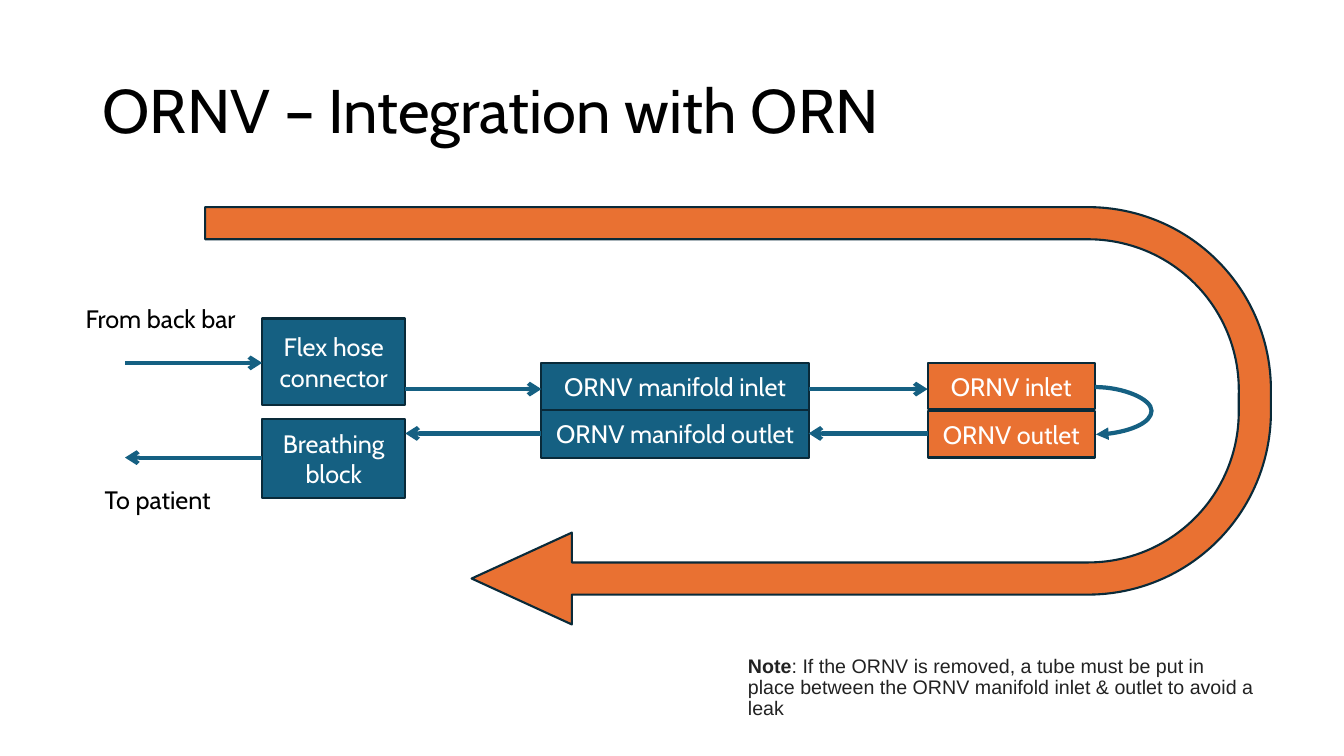
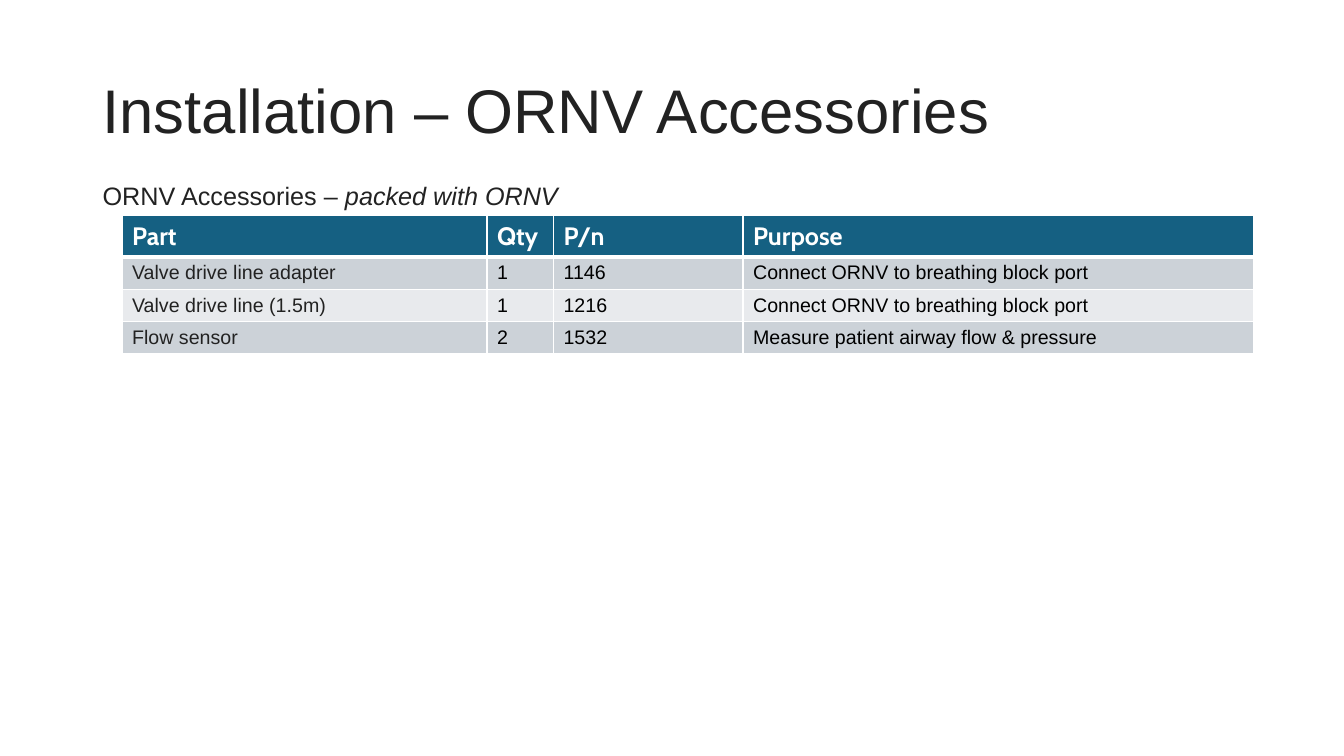
from dataclasses import dataclass

from lxml.etree import SubElement
from pptx import Presentation
from pptx.dml.color import RGBColor
from pptx.enum.shapes import MSO_CONNECTOR as Connector, MSO_SHAPE as Shape
from pptx.enum.text import MSO_ANCHOR as Anchor, MSO_AUTO_SIZE as AutoSize, PP_ALIGN as Align
from pptx.oxml.ns import qn
from pptx.util import Inches, Pt


@dataclass(frozen=True)
class Theme:
    blue: str = "156082"
    orange: str = "E97132"
    outline: str = "092A39"
    black: str = "000000"
    charcoal: str = "222222"
    white: str = "FFFFFF"
    bands: tuple = ("CCD2D8", "E8EAED")
    display: str = "Cabin"
    plain: str = "Arial"
    title_size: int = 44
    body_size: int = 18
    small_size: int = 14
    outline_width: float = 1.5
    arrow_width: float = 3


THEME = Theme()


def rgb(value):
    return RGBColor.from_string(value)


def add_run(paragraph, text, size, font, color, bold=False, italic=False):
    run = paragraph.add_run()
    run.text = text
    run.font.size = Pt(size)
    run.font.name = font
    run.font.color.rgb = rgb(color)
    run.font.bold = bold
    run.font.italic = italic


def add_text_box(slide, box, wrap=True, anchor=Anchor.TOP):
    shape = slide.shapes.add_textbox(*map(Inches, box))
    frame = shape.text_frame
    frame.word_wrap = wrap
    frame.auto_size = AutoSize.NONE
    frame.vertical_anchor = anchor
    return frame.paragraphs[0]


def set_indent(paragraph, left, first=0):
    properties = paragraph._p.get_or_add_pPr()
    properties.set("marL", str(Inches(left)))
    properties.set("indent", str(Inches(first)))


def add_title(slide, text, font, color):
    paragraph = add_text_box(slide, (0.92, 0.4, 11.5, 1.45), anchor=Anchor.MIDDLE)
    paragraph.line_spacing = 0.9
    add_run(paragraph, text, THEME.title_size, font, color)


def add_label(slide, box, text):
    paragraph = add_text_box(slide, box, wrap=False)
    add_run(paragraph, text, THEME.body_size, THEME.display, THEME.black)


def add_outlined_shape(slide, kind, box, fill):
    shape = slide.shapes.add_shape(kind, *map(Inches, box))
    shape.shadow.inherit = False
    shape.fill.solid()
    shape.fill.fore_color.rgb = rgb(fill)
    shape.line.color.rgb = rgb(THEME.outline)
    shape.line.width = Pt(THEME.outline_width)
    return shape


def add_block(slide, box, text, fill):
    frame = add_outlined_shape(slide, Shape.RECTANGLE, box, fill).text_frame
    frame.word_wrap = True
    frame.vertical_anchor = Anchor.MIDDLE
    paragraph = frame.paragraphs[0]
    paragraph.alignment = Align.CENTER
    add_run(paragraph, text, THEME.body_size, THEME.display, THEME.white)


def add_arrow(slide, start, end, kind=Connector.STRAIGHT, head="arrow"):
    connector = slide.shapes.add_connector(kind, *map(Inches, (*start, *end)))
    connector.line.color.rgb = rgb(THEME.blue)
    connector.line.width = Pt(THEME.arrow_width)
    SubElement(connector.line._get_or_add_ln(), qn("a:tailEnd"), type=head)
    SubElement(connector._element.spPr, qn("a:effectLst"))
    return connector


def add_return_curve(slide, start, end, bulge):
    connector = add_arrow(slide, start, end, Connector.CURVE, "triangle")
    ratio = round(bulge / (end[0] - start[0]) * 100000)
    adjustments = connector._element.spPr.find(qn("a:prstGeom")).get_or_add_avLst()
    SubElement(adjustments, qn("a:gd"), name="adj1", fmla=f"val {ratio}")


def add_flow_band(slide):
    band = add_outlined_shape(slide, Shape.U_TURN_ARROW, (5.25, -1.16, 4.14, 10.57), THEME.orange)
    band.rotation = 90
    for index, value in enumerate((0.077, 0.11, 0.24, 0.438, 0.75)):
        band.adjustments[index] = value


def style_cell(cell, fill, top, bottom):
    properties = cell._tc.get_or_add_tcPr()
    for side, width in zip("LRTB", (1, 1, top, bottom)):
        line = SubElement(properties, qn(f"a:ln{side}"), w=str(Pt(width)))
        SubElement(SubElement(line, qn("a:solidFill")), qn("a:srgbClr"), val=THEME.white)
    cell.fill.solid()
    cell.fill.fore_color.rgb = rgb(fill)


def add_parts_table(slide, left, top, widths, heights, rows):
    box = (left, top, sum(widths), sum(heights))
    table = slide.shapes.add_table(len(rows), len(widths), *map(Inches, box)).table
    for column, width in zip(table.columns, widths):
        column.width = Inches(width)
    for row_index, (values, height) in enumerate(zip(rows, heights)):
        table.rows[row_index].height = Inches(height)
        header = row_index == 0
        fill = THEME.blue if header else THEME.bands[(row_index - 1) % 2]
        for column_index, value in enumerate(values):
            cell = table.cell(row_index, column_index)
            style_cell(cell, fill, 3 if row_index == 1 else 1, 3 if header else 1)
            paragraph = cell.text_frame.paragraphs[0]
            if header:
                add_run(paragraph, value, THEME.body_size, THEME.display, THEME.white, bold=True)
            else:
                color = THEME.black if column_index else THEME.charcoal
                add_run(paragraph, value, THEME.small_size, THEME.plain, color)


def build_integration(slide):
    add_title(slide, "ORNV – Integration with ORN", THEME.display, THEME.black)
    add_flow_band(slide)

    hose_left, hose_right = 2.6, 4.02
    manifold_left, manifold_right = 5.37, 8.02
    valve_left, valve_right = 9.2, 10.86
    bar_left, inlet_y, outlet_y = 1.24, 3.86, 4.3
    hose_width = hose_right - hose_left
    manifold_width = manifold_right - manifold_left
    valve_width = valve_right - valve_left

    for box, text, fill in (
        ((hose_left, 3.16, hose_width, 0.86), "Flex hose connector", THEME.blue),
        ((hose_left, 4.16, hose_width, 0.78), "Breathing block", THEME.blue),
        ((manifold_left, 3.6, manifold_width, 0.47), "ORNV manifold inlet", THEME.blue),
        ((manifold_left, 4.07, manifold_width, 0.47), "ORNV manifold outlet", THEME.blue),
        ((valve_left, 3.6, valve_width, 0.46), "ORNV inlet", THEME.orange),
        ((valve_left, 4.08, valve_width, 0.46), "ORNV outlet", THEME.orange),
    ):
        add_block(slide, box, text, fill)

    for start_x, end_x, y in (
        (bar_left, hose_left, 3.6),
        (hose_right, manifold_left, inlet_y),
        (manifold_right, valve_left, inlet_y),
        (valve_left, manifold_right, outlet_y),
        (manifold_left, hose_right, outlet_y),
        (hose_left, bar_left, 4.54),
    ):
        add_arrow(slide, (start_x, y), (end_x, y))
    add_return_curve(slide, (valve_right, 3.84), (valve_right + 0.01, 4.31), 0.57)

    add_label(slide, (0.75, 2.96, 1.76, 0.4), "From back bar")
    add_label(slide, (0.94, 4.76, 1.26, 0.4), "To patient")

    note = add_text_box(slide, (6.82, 6.46, 5.73, 0.83))
    set_indent(note, 0.5)
    note.line_spacing = 0.9
    note.space_before = Pt(5)
    style = (THEME.small_size, THEME.plain, THEME.charcoal)
    add_run(note, "Note", *style, bold=True)
    add_run(
        note,
        ": If the ORNV is removed, a tube must be put in place between "
        "the ORNV manifold inlet & outlet to avoid a leak",
        *style,
    )


def build_accessories(slide):
    add_title(slide, "Installation – ORNV Accessories", THEME.plain, THEME.charcoal)
    caption = add_text_box(slide, (0.42, 1.74, 7.33, 0.4))
    set_indent(caption, 0.81, -0.31)
    style = (THEME.body_size, THEME.plain, THEME.charcoal)
    add_run(caption, "ORNV Accessories – ", *style)
    add_run(caption, "packed with ORNV", *style, italic=True)
    rows = (
        ("Part", "Qty", "P/n", "Purpose"),
        ("Valve drive line adapter", "1", "1146", "Connect ORNV to breathing block port"),
        ("Valve drive line (1.5m)", "1", "1216", "Connect ORNV to breathing block port"),
        ("Flow sensor", "2", "1532", "Measure patient airway flow & pressure"),
    )
    heights = (0.41, *[0.32] * (len(rows) - 1))
    add_parts_table(slide, 1.21, 2.14, (3.62, 0.66, 1.88, 5.06), heights, rows)


def main():
    presentation = Presentation()
    presentation.slide_width = Inches(13.33)
    presentation.slide_height = Inches(7.5)
    for build in (build_integration, build_accessories):
        build(presentation.slides.add_slide(presentation.slide_layouts[6]))
    presentation.save("out.pptx")


if __name__ == "__main__":
    main()
